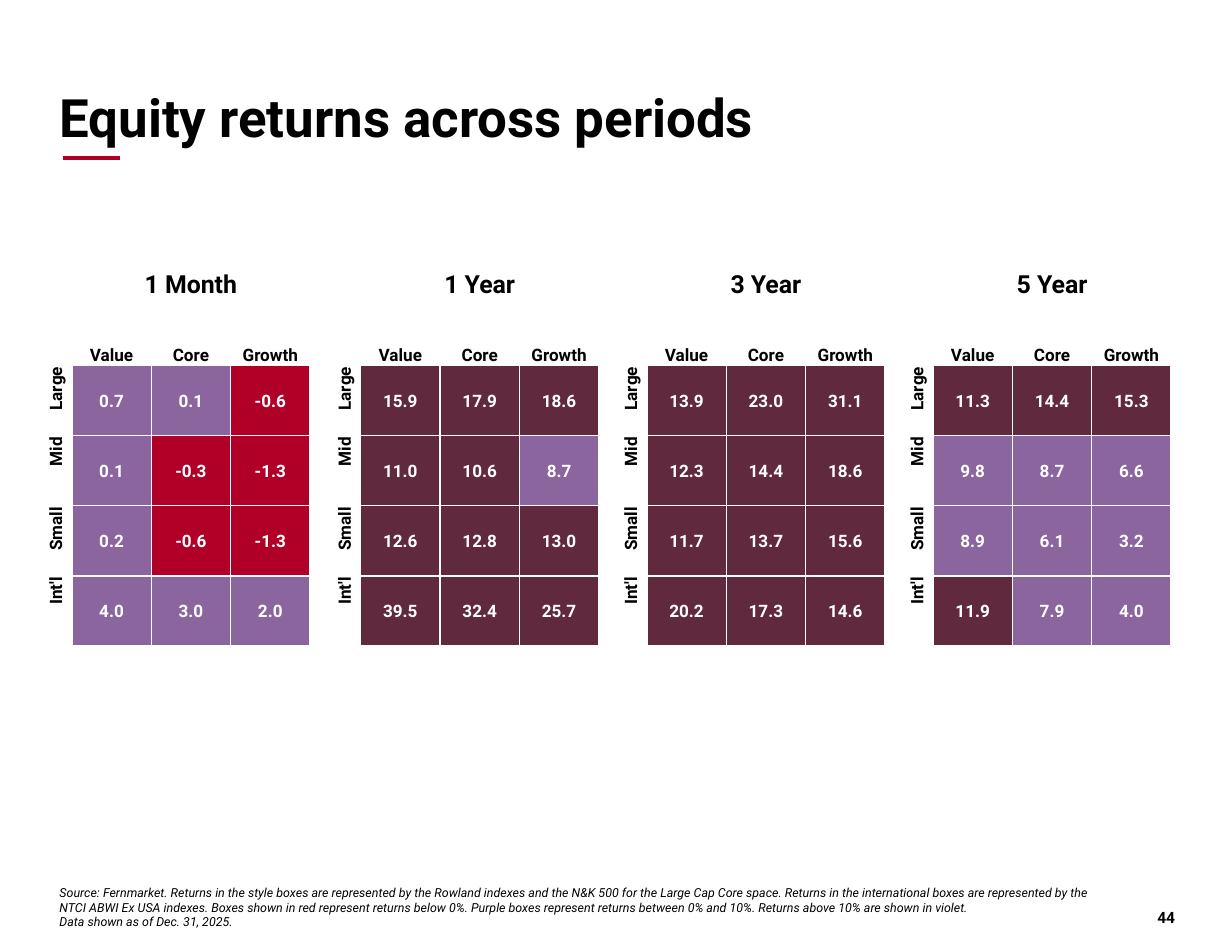
"""Build the slide of equity returns by style and period."""
from lxml.etree import SubElement
from pptx import Presentation
from pptx.dml.color import RGBColor
from pptx.enum.shapes import MSO_CONNECTOR as Line
from pptx.enum.text import MSO_ANCHOR as Anchor, PP_ALIGN as Align
from pptx.oxml.ns import qn
from pptx.util import Cm, Pt

BLACK = RGBColor(0, 0, 0)
WHITE = RGBColor(0xFF, 0xFF, 0xFF)
RED = RGBColor(0xB0, 0x00, 0x27)
PURPLE = RGBColor(0x8A, 0x65, 0x9E)
VIOLET = RGBColor(0x61, 0x29, 0x3E)

STYLES = ["Value", "Core", "Growth"]
SIZES = ["Large", "Mid", "Small", "Int'l"]
MONTH = [
    ("1 Month", [[0.7, 0.1, -0.6], [0.1, -0.3, -1.3], [0.2, -0.6, -1.3], [4.0, 3.0, 2.0]]),
]
YEARS = [
    ("1 Year", [[15.9, 17.9, 18.6], [11.0, 10.6, 8.7], [12.6, 12.8, 13.0], [39.5, 32.4, 25.7]]),
    ("3 Year", [[13.9, 23.0, 31.1], [12.3, 14.4, 18.6], [11.7, 13.7, 15.6], [20.2, 17.3, 14.6]]),
    ("5 Year", [[11.3, 14.4, 15.3], [9.8, 8.7, 6.6], [8.9, 6.1, 3.2], [11.9, 7.9, 4.0]]),
]
NOTE = (
    "Source: Fernmarket. Returns in the style boxes are represented by the Rowland indexes "
    "and the N&K 500 for the Large Cap Core space. Returns in the international boxes are "
    "represented by the NTCI ABWI Ex USA indexes. Boxes shown in red represent returns below 0%. "
    "Purple boxes represent returns between 0% and 10%. Returns above 10% are shown in violet."
)
DATE = "Data shown as of Dec. 31, 2025."
LABEL, BOX, GAP = 0.61, 1.8, 0.48
ROWS = [0.89, 0.89, 0.62] + [1.59] * 4


def write(frame, *lines, size=11, color=BLACK, bold=True, italic=False, align=Align.CENTER):
    for i, line in enumerate(lines):
        par = frame.add_paragraph() if i else frame.paragraphs[0]
        par.alignment = align
        run = par.add_run()
        run.text = line
        font = run.font
        font.name, font.size = "Roboto", Pt(size)
        font.bold, font.italic = bold, italic
        font.color.rgb = color


deck = Presentation()
deck.slide_width, deck.slide_height = Cm(27.94), Cm(21.59)
slide = deck.slides.add_slide(deck.slide_layouts[6])

rule = slide.shapes.add_connector(Line.STRAIGHT, Cm(1.42), Cm(3.58), Cm(2.72), Cm(3.58))
rule.line.color.rgb = RED
rule.line.width = Pt(3)
SubElement(rule._element.spPr, qn("a:effectLst"))

for x, y, wide, high, foot, lines, form in [
    (1.35, 1.4, 25.37, 2.29, 0.33, ["Equity returns across periods"],
     dict(size=34, align=Align.LEFT)),
    (25.76, 20.12, 0.89, 0.89, 0, ["44"], dict(size=10, align=Align.RIGHT)),
    (1.35, 19.71, 23.77, 1.37, 0, [NOTE, DATE],
     dict(size=8, bold=False, italic=True, align=Align.LEFT)),
]:
    frame = slide.shapes.add_textbox(Cm(x), Cm(y), Cm(wide), Cm(high)).text_frame
    frame.word_wrap = True
    frame.vertical_anchor = Anchor.BOTTOM
    frame.margin_left = frame.margin_right = frame.margin_top = 0
    frame.margin_bottom = Cm(foot)
    write(frame, *lines, **form)

for x, terms in [(1.02, MONTH), (7.57, YEARS)]:
    cols = ([LABEL] + [BOX] * 3 + [GAP]) * len(terms)
    cols.pop()
    table = slide.shapes.add_table(
        len(ROWS), len(cols), Cm(x), Cm(5.89), Cm(sum(cols)), Cm(sum(ROWS))).table
    table.first_row = table.horz_banding = False
    for col, wide in zip(table.columns, cols):
        col.width = Cm(wide)
    for row, high in zip(table.rows, ROWS):
        row.height = Cm(high)
    for cell in table.iter_cells():
        cell.margin_left = cell.margin_right = cell.margin_top = Cm(0.03)
        cell.margin_bottom = 0
        cell.vertical_anchor = Anchor.BOTTOM
        cell.fill.background()
        end = cell.text_frame.paragraphs[0]._p.get_or_add_endParaRPr()
        end.set("sz", "800")

    for t, (term, grid) in enumerate(terms):
        left = t * 5
        head = table.cell(0, left + 1)
        head.merge(table.cell(0, left + 3))
        write(head.text_frame, term, size=16)
        for c, style in enumerate(STYLES, left + 1):
            write(table.cell(2, c).text_frame, style)
        for r, (name, vals) in enumerate(zip(SIZES, grid), 3):
            side = table.cell(r, left)
            side.vertical_anchor = Anchor.MIDDLE
            side._tc.get_or_add_tcPr().set("vert", "vert270")
            write(side.text_frame, name, align=Align.RIGHT)
            for c, val in enumerate(vals, left + 1):
                cell = table.cell(r, c)
                cell.vertical_anchor = Anchor.MIDDLE
                props = cell._tc.get_or_add_tcPr()
                for i, edge in enumerate(["lnL", "lnR", "lnT", "lnB"]):
                    line = props.makeelement(qn(f"a:{edge}"), {"w": str(Pt(1))})
                    fill = SubElement(line, qn("a:solidFill"))
                    SubElement(fill, qn("a:srgbClr"), val=str(WHITE))
                    props.insert(i, line)
                cell.fill.solid()
                cell.fill.fore_color.rgb = RED if val < 0 else PURPLE if val <= 10 else VIOLET
                write(cell.text_frame, f"{val:.1f}", color=WHITE)

deck.save("out.pptx")
